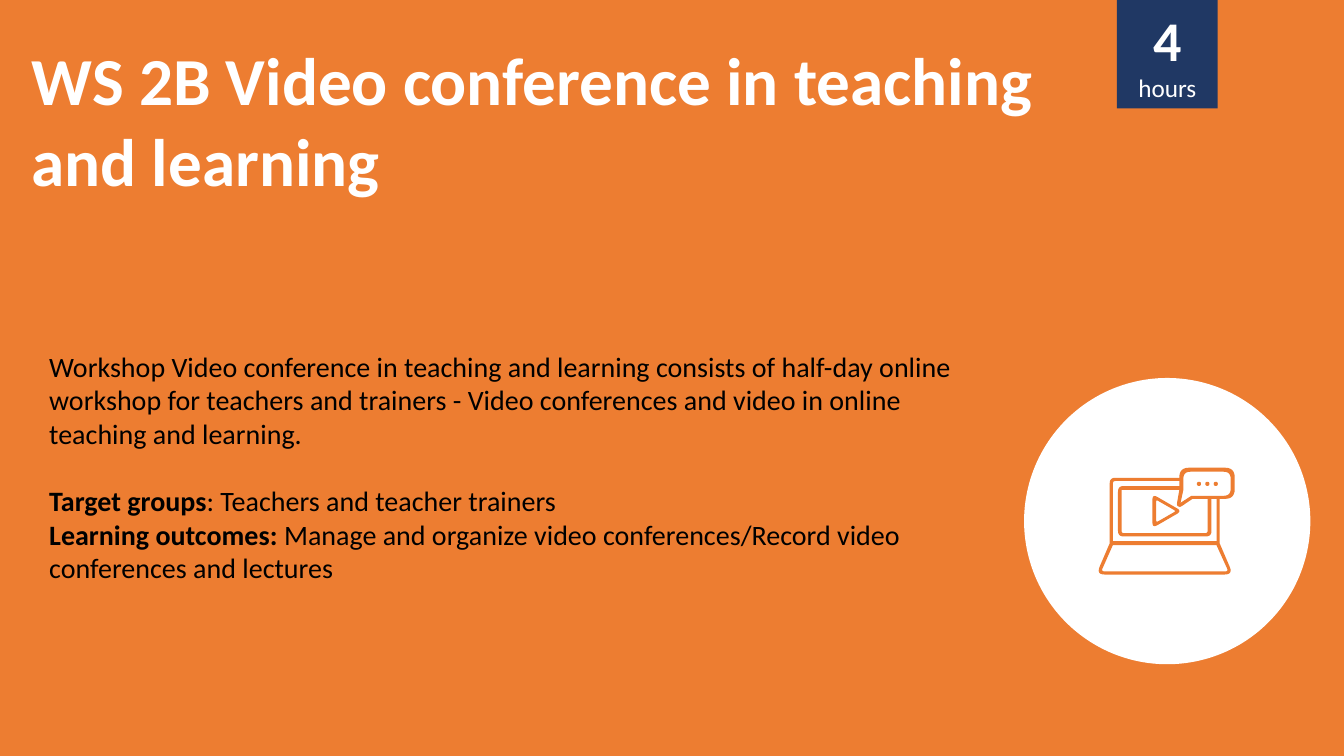
from dataclasses import dataclass

import pptx
import pptx.dml.color
import pptx.enum.shapes
import pptx.enum.text
import pptx.util

Pt = pptx.util.Pt
Preset = pptx.enum.shapes.MSO_SHAPE
Align = pptx.enum.text.PP_ALIGN


@dataclass(frozen=True)
class Theme:
    """Hold the colours, font and type sizes of the slide."""
    orange: str = "ED7D31"
    navy: str = "203864"
    white: str = "FFFFFF"
    black: str = "000000"
    font: str = "Calibri"
    title_size: float = 48
    number_size: float = 40
    body_size: float = 20
    unit_size: float = 18


@dataclass(frozen=True)
class Box:
    """Place a rectangle on the slide in points."""
    left: float
    top: float
    width: float
    height: float

    def lengths(self) -> list:
        """Return the four lengths for a python-pptx call."""
        return [Pt(value) for value in (self.left, self.top, self.width, self.height)]


@dataclass(frozen=True)
class Span:
    """Describe a piece of text in one format."""
    text: str
    size: float
    bold: bool = False


@dataclass(frozen=True)
class Line:
    """Describe a paragraph and the space above it."""
    spans: tuple
    space_before: float = 0


@dataclass(frozen=True)
class Corner:
    """Describe an outline corner and how far its rounding reaches."""
    x: float
    y: float
    reach: float = 0


def dot(left: float, top: float, size: float) -> tuple:
    """Return the corners of a round dot."""
    right, bottom, reach = left + size, top + size, size / 2
    return (Corner(left, top, reach), Corner(right, top, reach),
            Corner(right, bottom, reach), Corner(left, bottom, reach))


THEME = Theme()
BODY = (
    Line((Span("Workshop Video conference in teaching and learning consists of half-day online "
               "workshop for teachers and trainers - Video conferences and video in online "
               "teaching and learning.", THEME.body_size),)),
    Line((Span("Target groups", THEME.body_size, True),
          Span(": Teachers and teacher trainers", THEME.body_size)), space_before=24),
    Line((Span("Learning outcomes: ", THEME.body_size, True),
          Span("Manage and organize video conferences/Record video conferences and lectures",
               THEME.body_size))),
)
SILHOUETTE = (
    Corner(842.4, 341.3), Corner(842.4, 334.1, 7), Corner(882, 334.1, 7),
    Corner(882, 356.4, 7), Corner(871.2, 356.4), Corner(871.2, 388.1),
    Corner(880.8, 410.4, 6), Corner(783.1, 410.4, 6), Corner(792.7, 388.1),
    Corner(792.7, 341.3, 4))
KEYBOARD = (
    Corner(794.9, 389.5), Corner(869, 389.5), Corner(877.5, 408.2, 2.4), Corner(786.6, 408.2, 2.4))
FRAME = (
    Corner(794.9, 343.6, 2), Corner(842.4, 343.6), Corner(842.4, 347.2),
    Corner(798.6, 347.2, 4), Corner(798.6, 383.2, 4), Corner(865.4, 383.2, 4),
    Corner(865.4, 356.4), Corner(869, 356.4), Corner(869, 386.6), Corner(794.9, 386.6))
SCREEN = (
    Corner(801.2, 350), Corner(842.4, 350), Corner(840.3, 362.2, 3), Corner(843.5, 362, 1),
    Corner(851.8, 356.4), Corner(862.6, 356.4), Corner(862.6, 380.8, 1.5),
    Corner(801.2, 380.8, 1.5))
PLAY_OUTER = (Corner(823.2, 353, 4), Corner(844.2, 365.1, 4), Corner(823.2, 377.2, 4))
PLAY_INNER = (Corner(825.9, 357, 1.5), Corner(840, 365.1, 1.5), Corner(825.9, 373.2, 1.5))
BUBBLE = (
    Corner(845.3, 337, 5), Corner(879.1, 337, 5), Corner(879.1, 354.2, 5),
    Corner(851, 354.2), Corner(843.3, 359.2, 0.5), Corner(845.3, 349.9))
DOTS = tuple(dot(855 + 6 * index, 344.2, 2.9) for index in range(3))
LAPTOP = (SILHOUETTE, KEYBOARD, FRAME, SCREEN, PLAY_OUTER, PLAY_INNER, BUBBLE, *DOTS)


def colour(code: str) -> pptx.dml.color.RGBColor:
    """Turn a hexadecimal code into a colour."""
    return pptx.dml.color.RGBColor.from_string(code)


def paint(shape, fill: str):
    """Fill a shape and take away its line and shadow."""
    shape.shadow.inherit = False
    shape.fill.solid()
    shape.fill.fore_color.rgb = colour(fill)
    shape.line.fill.background()
    return shape


def draw_shape(slide, preset, box: Box, fill: str):
    """Draw a filled preset shape."""
    return paint(slide.shapes.add_shape(preset, *box.lengths()), fill)


def write_text(shape, lines: tuple, *, text_colour: str, align=Align.LEFT) -> None:
    """Write formatted paragraphs into a shape."""
    frame = shape.text_frame
    frame.word_wrap = True
    frame.auto_size = pptx.enum.text.MSO_AUTO_SIZE.SHAPE_TO_FIT_TEXT
    for index, line in enumerate(lines):
        paragraph = frame.add_paragraph() if index else frame.paragraphs[0]
        paragraph.alignment = align
        paragraph.space_before = Pt(line.space_before)
        for span in line.spans:
            for part_index, part in enumerate(span.text.split("\n")):
                if part_index:
                    paragraph.add_line_break()
                if part:
                    run = paragraph.add_run()
                    run.text = part
                    run.font.name = THEME.font
                    run.font.size = Pt(span.size)
                    run.font.bold = span.bold
                    run.font.color.rgb = colour(text_colour)


def toward(start: Corner, end: Corner) -> tuple[float, float]:
    """Return the point where rounding begins on the side from start to end."""
    length = ((end.x - start.x) ** 2 + (end.y - start.y) ** 2) ** 0.5
    share = start.reach / length
    return start.x + (end.x - start.x) * share, start.y + (end.y - start.y) * share


def rounded_points(corners: tuple, steps: int = 6) -> list:
    """Trace an outline with each corner rounded by a quadratic curve."""
    points = []
    for index, corner in enumerate(corners):
        if not corner.reach:
            points.append((Pt(corner.x), Pt(corner.y)))
            continue
        first = toward(corner, corners[index - 1])
        last = toward(corner, corners[(index + 1) % len(corners)])
        for step in range(steps + 1):
            t = step / steps
            weights = ((1 - t) ** 2, 2 * t * (1 - t), t ** 2)
            x, y = (sum(weight * value for weight, value in zip(weights, values))
                    for values in zip(first, (corner.x, corner.y), last))
            points.append((Pt(x), Pt(y)))
    return points


def draw_outlines(slide, outlines: tuple, fill: str) -> None:
    """Draw nested outlines as one shape with openings."""
    traced = [rounded_points(corners) for corners in outlines]
    builder = slide.shapes.build_freeform(*traced[0][0])
    for index, points in enumerate(traced):
        if index:
            builder.move_to(*points[0])
        builder.add_line_segments(points[1:], close=True)
    paint(builder.convert_to_shape(), fill)


def main() -> None:
    """Build and save the workshop slide."""
    presentation = pptx.Presentation()
    presentation.slide_width, presentation.slide_height = Pt(960), Pt(540)
    slide = presentation.slides.add_slide(presentation.slide_layouts[6])

    draw_shape(slide, Preset.RECTANGLE, Box(0, 0, 960, 540), THEME.orange)
    title = slide.shapes.add_textbox(*Box(15.5, 23.8, 935.3, 123.8).lengths())
    write_text(title, (Line((Span("WS 2B Video conference in teaching \nand learning",
                                  THEME.title_size, True),)),), text_colour=THEME.white)
    draw_shape(slide, Preset.OVAL, Box(731.5, 270, 204.5, 204.5), THEME.white)
    body = slide.shapes.add_textbox(*Box(28.1, 245.8, 679.7, 193.7).lengths())
    write_text(body, BODY, text_colour=THEME.black)
    draw_outlines(slide, LAPTOP, THEME.orange)

    duration = draw_shape(slide, Preset.RECTANGLE, Box(797.8, 0, 72, 77.4), THEME.navy)
    write_text(duration, (Line((Span("4\n", THEME.number_size, True),
                                Span("hours", THEME.unit_size))),),
               text_colour=THEME.white, align=Align.CENTER)
    presentation.save("out.pptx")


if __name__ == "__main__":
    main()
